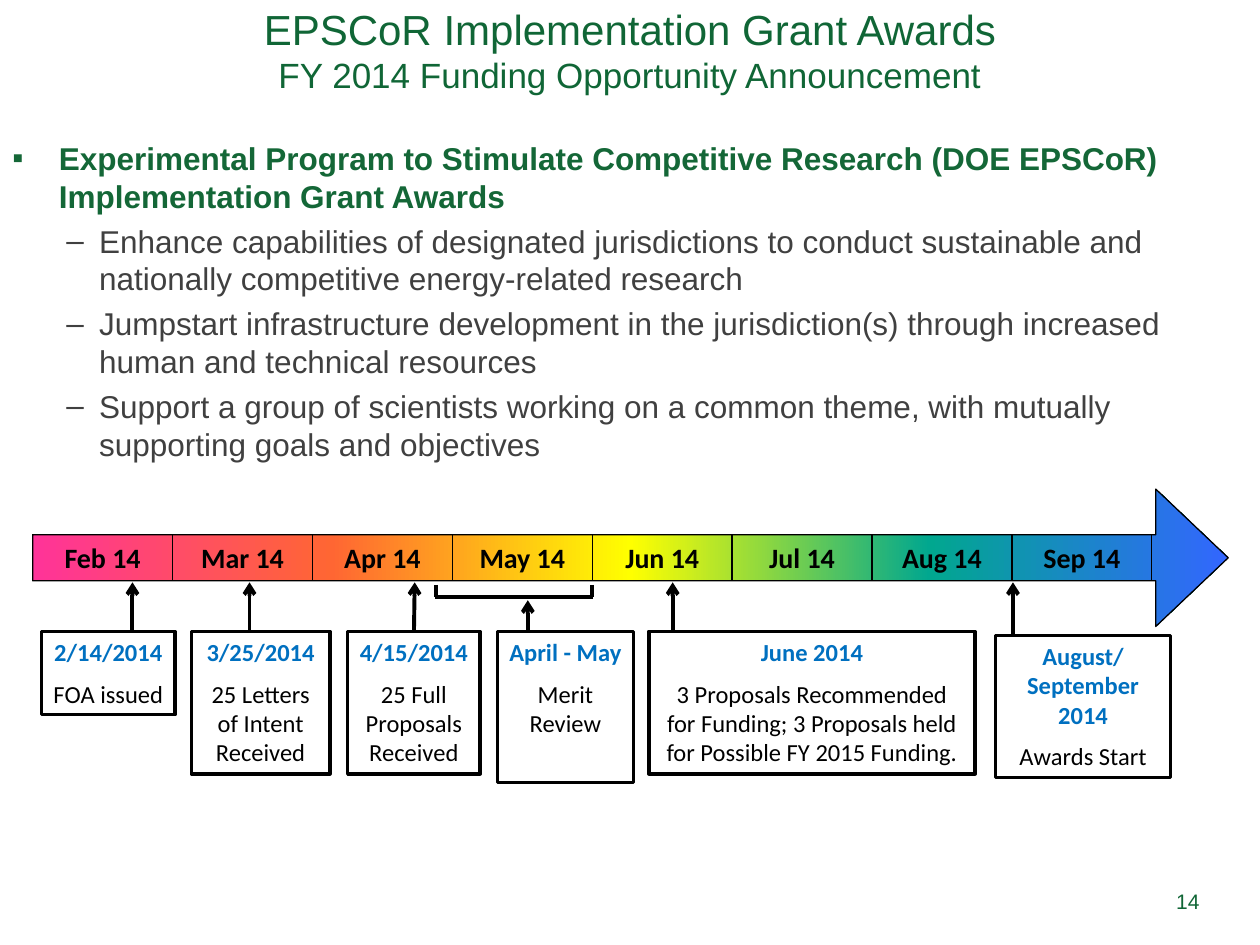
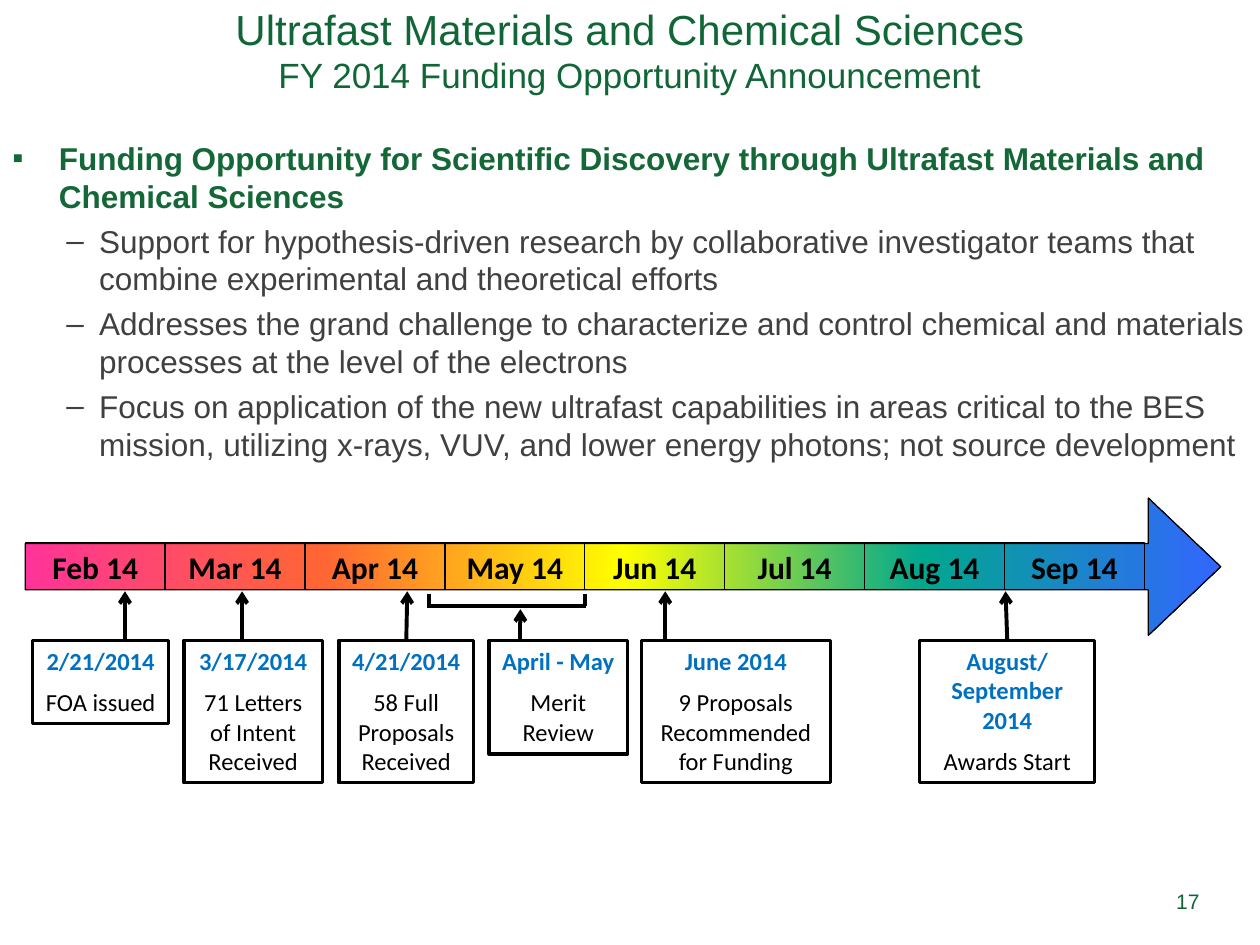
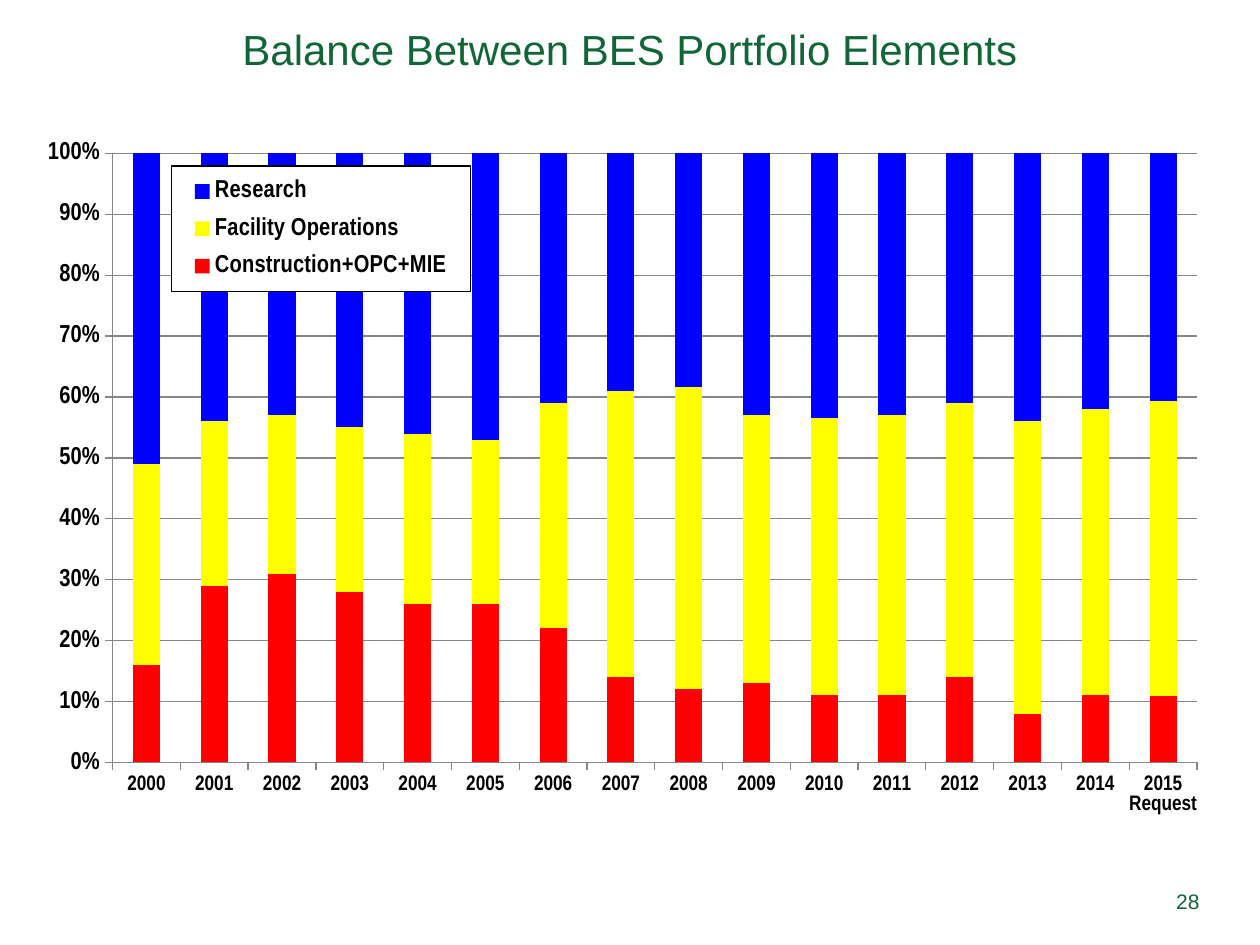
import pptx
import pptx.chart.data
import pptx.dml.color
import pptx.enum.chart
import pptx.enum.shapes
import pptx.enum.text
import pptx.oxml.ns
import pptx.util
from lxml import etree

Cm, Pt = pptx.util.Cm, pptx.util.Pt
qn = pptx.oxml.ns.qn
ALIGN = pptx.enum.text.PP_ALIGN
ANCHOR = pptx.enum.text.MSO_ANCHOR
SHAPE = pptx.enum.shapes.MSO_SHAPE

COLORS = {
    "title": "106636", "lead": "146737", "body": "404040", "date": "0070C0",
    "black": "000000", "white": "FFFFFF", "grid": "878787",
    "construction": "FF0000", "operations": "FFFF00", "research": "0000FF",
}
RAINBOW = [(0, "FF3399"), (25, "FF6633"), (50, "FFFF00"), (75, "01A78F"), (100, "3366FF")]
MONTHS = ["Feb", "Mar", "Apr", "May", "Jun", "Jul", "Aug", "Sep"]

# Timeline measures in cm, counted from its top left corner
MONTH_W, MONTH_H, MONTH_TOP = 2.82, 0.94, 0.91
CARD_TOP, TIP_TOP, MERIT_TIP_TOP = 2.87, 1.88, 2.24
TIP_X = [2.01, 4.37, 7.7, 9.98, 12.9, 19.76]
MERIT = 3
BRACKET = [(8.13, 1.93, 8.13, 2.18), (11.28, 1.93, 11.28, 2.18), (8.1, 2.18, 11.3, 2.18)]


def rgb(name):
    return pptx.dml.color.RGBColor.from_string(COLORS[name])


def add_text(tf, text, size=18, color="black", font="Arial", bold=False,
             align=ALIGN.LEFT, before=0, bullet=None, indent=(0, 0), same=None):
    """Write text as a new paragraph, or on a new line of the paragraph `same`."""
    if same is not None:
        p = same
        p.add_line_break()
    else:
        p = tf.paragraphs[0]
        if p.runs:
            p = tf.add_paragraph()
        p.alignment = align
        p.space_before = Pt(before)
    if bullet:
        pPr = p._p.get_or_add_pPr()
        pPr.set("marL", str(Cm(indent[0])))
        pPr.set("indent", str(Cm(indent[1])))
        etree.SubElement(pPr, qn("a:buFont")).set("typeface", "Arial")
        etree.SubElement(pPr, qn("a:buChar")).set("char", bullet)
    r = p.add_run()
    r.text = text
    r.font.name, r.font.size, r.font.bold = font, Pt(size), bold
    r.font.color.rgb = rgb(color)
    return p


def style_font(font, size, name="Arial Narrow", bold=True):
    font.name, font.size, font.bold = name, Pt(size), bold
    font.color.rgb = rgb("black")


def set_layout(parent, index, inner=False, **place):
    """Give a chart part a fixed place, in fractions of the chart."""
    for old in parent.findall(qn("c:layout")):
        parent.remove(old)
    layout = etree.Element(qn("c:layout"))
    manual = etree.SubElement(layout, qn("c:manualLayout"))
    if inner:
        etree.SubElement(manual, qn("c:layoutTarget")).set("val", "inner")
    for key in "xy":
        etree.SubElement(manual, qn(f"c:{key}Mode")).set("val", "edge")
    for key in "xywh":
        etree.SubElement(manual, qn(f"c:{key}")).set("val", str(place[key]))
    parent.insert(index, layout)


class Deck:
    def __init__(self):
        self.prs = pptx.Presentation()
        self.prs.slide_width, self.prs.slide_height = Cm(25.4), Cm(19.05)
        self.s = None

    def new_slide(self, number, title, subtitle=None, top=-0.18, height=2.36):
        self.s = self.prs.slides.add_slide(self.prs.slide_layouts[6])
        tf = self.text_box(0, top, 25.4, height, ANCHOR.MIDDLE)
        p = add_text(tf, title, size=24, color="title", align=ALIGN.CENTER)
        if subtitle:
            add_text(tf, subtitle, size=20, color="title", same=p)
        tf = self.text_box(23.11, 17.65, 1.32, 1.02, ANCHOR.MIDDLE)
        add_text(tf, str(number), size=12, color="title", align=ALIGN.RIGHT)

    def text_box(self, x, y, w, h, anchor=ANCHOR.TOP):
        tf = self.s.shapes.add_textbox(Cm(x), Cm(y), Cm(w), Cm(h)).text_frame
        tf.word_wrap, tf.vertical_anchor = True, anchor
        return tf

    def bullets(self, lead, points):
        tf = self.text_box(0, 2.68, 25.4, 7.11)
        add_text(tf, lead, color="lead", bold=True, bullet="▪", indent=(0.94, -0.94))
        for point in points:
            add_text(tf, point, color="body", before=4, bullet="–", indent=(1.75, -0.66))

    def shape(self, kind, x, y, w, h, fill=None, weight=0.75):
        sp = self.s.shapes.add_shape(kind, Cm(x), Cm(y), Cm(w), Cm(h))
        sp.shadow.inherit = False
        sp.line.color.rgb, sp.line.width = rgb("black"), Pt(weight)
        if fill:
            sp.fill.solid()
            sp.fill.fore_color.rgb = rgb(fill)
        else:
            sp.fill.background()
        return sp

    def rainbow_arrow(self, x, y):
        sp = self.shape(SHAPE.RIGHT_ARROW, x, y, 24.1, 2.77)
        sp.adjustments[0], sp.adjustments[1] = 0.336, 0.527
        sp.fill.gradient()
        sp.fill.gradient_angle = 0
        stops = sp._element.spPr.find(".//" + qn("a:gsLst"))
        for old in list(stops):
            stops.remove(old)
        for pos, color in RAINBOW:
            gs = etree.SubElement(stops, qn("a:gs"), pos=str(pos * 1000))
            etree.SubElement(gs, qn("a:srgbClr"), val=color)

    def line(self, x1, y1, x2, y2, arrow=False):
        c = self.s.shapes.add_connector(pptx.enum.shapes.MSO_CONNECTOR.STRAIGHT,
                                        Cm(x1), Cm(y1), Cm(x2), Cm(y2))
        c.line.color.rgb, c.line.width = rgb("black"), Pt(2.25)
        if arrow:
            etree.SubElement(c.line._get_or_add_ln(), qn("a:tailEnd"), type="arrow")
        etree.SubElement(c._element.spPr, qn("a:effectLst"))
        return c

    def card(self, x, y, w, h, dates, notes, wrap):
        sp = self.shape(SHAPE.RECTANGLE, x, y, w, h, "white", 2)
        tf = sp.text_frame
        tf.word_wrap, tf.vertical_anchor = wrap, ANCHOR.TOP
        tf.margin_left = tf.margin_right = Cm(0.23)
        tf.margin_top = tf.margin_bottom = Cm(0.11)
        look = dict(size=14, font="Calibri", align=ALIGN.CENTER)
        for date in dates.split("\n"):
            add_text(tf, date, color="date", bold=True, **look)
        for i, note in enumerate(notes.split("\n")):
            add_text(tf, note, before=0 if i else 7, **look)
        return sp

    def timeline(self, x0, y0, month_size, cards):
        self.rainbow_arrow(x0, y0)
        # Months
        for i, month in enumerate(MONTHS):
            sp = self.shape(SHAPE.RECTANGLE, x0 + i * MONTH_W, y0 + MONTH_TOP, MONTH_W, MONTH_H)
            sp.text_frame.vertical_anchor = ANCHOR.MIDDLE
            add_text(sp.text_frame, f"{month} 14", size=month_size, font="Calibri",
                     bold=True, align=ALIGN.CENTER)
        # Bracket over the review period
        for x1, y1, x2, y2 in BRACKET:
            self.line(x0 + x1, y0 + y1, x0 + x2, y0 + y2)
        # Event cards and their pointers
        for i, (x, drop, w, h, wrap, dates, notes) in enumerate(cards):
            top = CARD_TOP + drop
            sp = self.card(x0 + x, y0 + top, w, h, dates, notes, wrap)
            tip = MERIT_TIP_TOP if i == MERIT else TIP_TOP
            pointer = self.line(x0 + TIP_X[i], y0 + top, x0 + TIP_X[i], y0 + tip, arrow=True)
            if abs(x + w / 2 - TIP_X[i]) < 0.05:
                pointer.begin_connect(sp, 0)

    def share_chart(self, x, y, w, h, cats, series):
        data = pptx.chart.data.CategoryChartData()
        data.categories = cats
        for name, _, values in series:
            data.add_series(name, values)
        chart = self.s.shapes.add_chart(
            pptx.enum.chart.XL_CHART_TYPE.COLUMN_STACKED_100,
            Cm(x), Cm(y), Cm(w), Cm(h), data).chart
        style_font(chart.font, 10, "Calibri", False)
        chart.has_title = False
        # Columns
        plot = chart.plots[0]
        plot.gap_width, plot.overlap, plot.vary_by_categories = 150, 100, False
        for ser, (_, color, _) in zip(plot.series, series):
            ser.format.fill.solid()
            ser.format.fill.fore_color.rgb = rgb(color)
        # Axes
        cat, val = chart.category_axis, chart.value_axis
        val.minimum_scale, val.maximum_scale, val.major_unit = 0, 1, 0.1
        val.has_major_gridlines = True
        val.tick_labels.number_format = "0%"
        val.tick_labels.number_format_is_linked = False
        for axis, size in ((cat, 12), (val, 14)):
            axis.major_tick_mark = pptx.enum.chart.XL_TICK_MARK.OUTSIDE
            style_font(axis.tick_labels.font, size)
        for part in (cat, val, val.major_gridlines):
            part.format.line.color.rgb = rgb("grid")
            part.format.line.width = Pt(0.75)
        set_layout(chart._chartSpace.chart.plotArea, 0, True, x=0.075, y=0.037, w=0.906, h=0.871)
        # Legend
        chart.has_legend = True
        legend = chart.legend
        legend.position = pptx.enum.chart.XL_LEGEND_POSITION.LEFT
        legend.include_in_layout = True
        style_font(legend.font, 14)
        el = legend._element
        set_layout(el, 1, x=0.124, y=0.055, w=0.25, h=0.18)
        spPr = etree.Element(qn("c:spPr"))
        ln = etree.Element(qn("a:ln"), w=str(Pt(0.75)))
        for parent, color in ((spPr, "white"), (ln, "black")):
            solid = etree.SubElement(parent, qn("a:solidFill"))
            etree.SubElement(solid, qn("a:srgbClr"), val=COLORS[color])
        spPr.append(ln)
        el.find(qn("c:overlay")).addnext(spPr)


def main():
    deck = Deck()
    announcement = "FY 2014 Funding Opportunity Announcement"

    # Implementation grants
    deck.new_slide(14, "EPSCoR Implementation Grant Awards", announcement)
    deck.bullets(
        "Experimental Program to Stimulate Competitive Research (DOE EPSCoR) "
        "Implementation Grant Awards",
        ["Enhance capabilities of designated jurisdictions to conduct sustainable and "
         "nationally competitive energy-related research",
         "Jumpstart infrastructure development in the jurisdiction(s) through increased "
         "human and technical resources",
         "Support a group of scientists working on a common theme, with mutually "
         "supporting goals and objectives"])
    # Each card: left, drop, width, height, wrap, dates, notes
    deck.timeline(0.66, 9.86, 16, [
        (0.18, 0, 2.69, 1.68, False, "2/14/2014", "FOA issued"),
        (3.2, 0, 2.79, 2.87, True, "3/25/2014", "25 Letters of Intent\nReceived"),
        (6.35, 0, 2.67, 2.87, False, "4/15/2014", "25 Full\nProposals\nReceived"),
        (9.37, 0, 2.74, 3.05, False, "April - May", "Merit\nReview"),
        (12.42, 0, 6.58, 2.87, True, "June 2014",
         "3 Proposals Recommended for Funding; 3 Proposals held for Possible FY 2015 Funding."),
        (19.41, 0.08, 3.53, 2.87, True, "August/\nSeptember 2014", "Awards Start"),
    ])

    # Ultrafast sciences
    deck.new_slide(17, "Ultrafast Materials and Chemical Sciences", announcement)
    deck.bullets(
        "Funding Opportunity for Scientific Discovery through Ultrafast Materials and "
        "Chemical Sciences",
        ["Support for hypothesis-driven research by collaborative investigator teams that "
         "combine experimental and theoretical efforts",
         "Addresses the grand challenge to characterize and control chemical and materials "
         "processes at the level of the electrons",
         "Focus on application of the new ultrafast capabilities in areas critical to the BES "
         "mission, utilizing x-rays, VUV, and lower energy photons; not source development"])
    deck.timeline(0.51, 10.04, 18, [
        (0.15, 0, 2.74, 1.68, False, "2/21/2014", "FOA issued"),
        (3.2, 0, 2.79, 2.87, True, "3/17/2014", "71 Letters of Intent\nReceived"),
        (6.32, 0, 2.72, 2.87, False, "4/21/2014", "58 Full\nProposals\nReceived"),
        (9.35, 0, 2.79, 2.29, False, "April - May", "Merit\nReview"),
        (12.42, 0, 3.81, 2.87, True, "June 2014", "9 Proposals Recommended for Funding"),
        (18.03, 0, 3.53, 2.87, True, "August/ September 2014", "Awards Start"),
    ])

    # Portfolio balance
    deck.new_slide(28, "Balance Between BES Portfolio Elements", top=-0.61, height=3.18)
    years = [str(year) for year in range(2000, 2015)] + ["2015\nRequest"]
    deck.share_chart(0.46, 2.57, 24.13, 14.1, years, [
        ("Construction+OPC+MIE", "construction",
         [16, 29, 31, 28, 26, 26, 22, 14, 12, 13, 11, 11, 14, 8, 11, 11]),
        ("Facility Operations", "operations",
         [33, 27, 26, 27, 28, 27, 37, 47, 49, 44, 45, 46, 45, 48, 47, 49]),
        ("Research", "research",
         [51, 44, 43, 45, 46, 47, 41, 39, 38, 43, 43, 43, 41, 44, 42, 41]),
    ])

    deck.prs.save("out.pptx")


if __name__ == "__main__":
    main()
